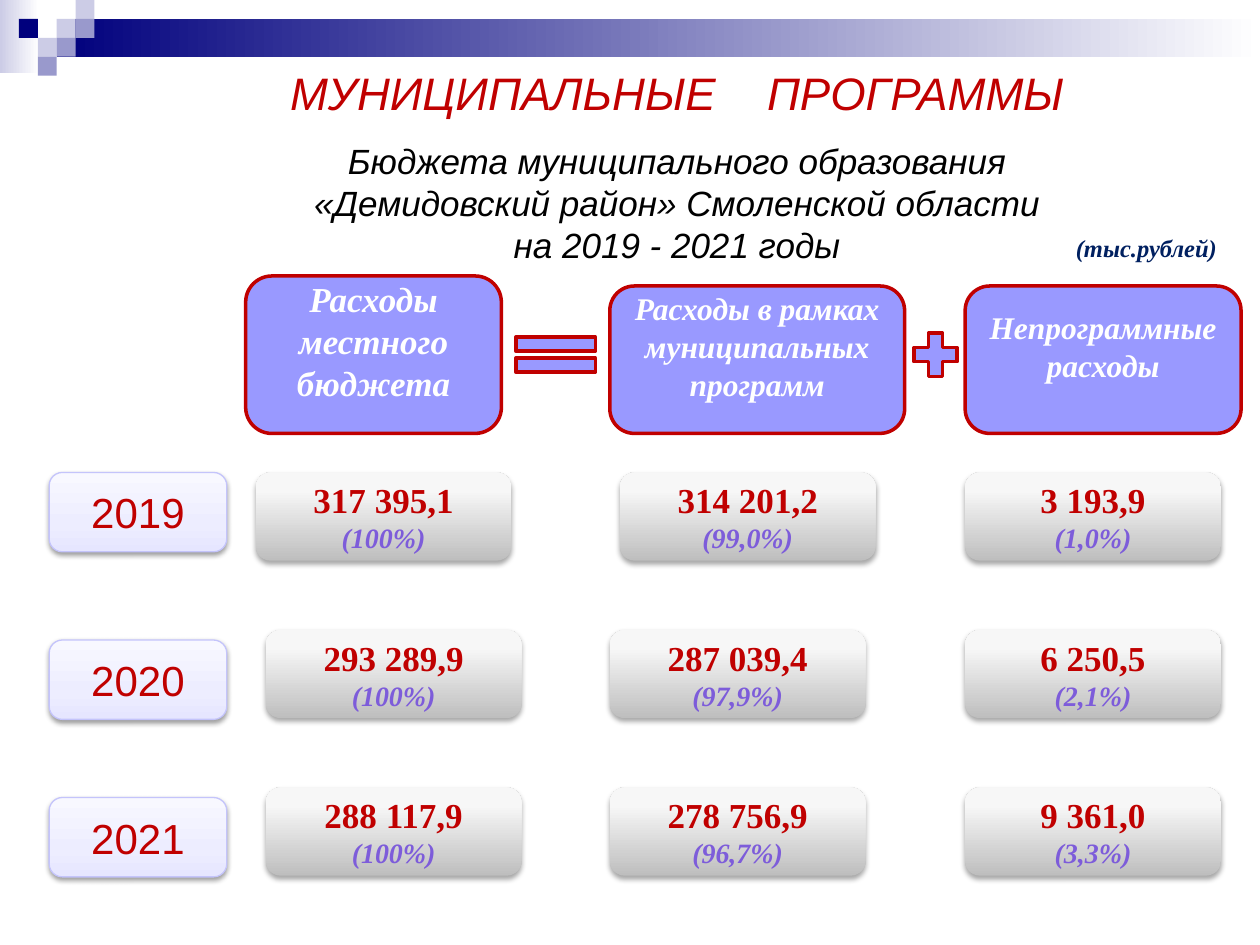
from dataclasses import dataclass

from lxml.etree import SubElement
from pptx import Presentation
from pptx.dml.color import RGBColor
from pptx.enum.shapes import MSO_SHAPE as Preset
from pptx.enum.text import MSO_ANCHOR as Anchor, PP_ALIGN as Align
from pptx.oxml.ns import qn
from pptx.util import Inches, Pt

COLORS = {
    "navy": "00007D", "pale": "CCCCE6", "lilac": "9999CC", "white": "FFFFFF",
    "red": "C00000", "violet": "9999FF", "percent": "7D5CDA", "black": "000000",
    "unit": "002060", "year_line": "C4C4FB",
}
VALUE_STOPS = [(0, "BEBEBE"), (80, "F7F7F7"), (100, "F8F8F8")]
YEAR_STOPS = [(0, "E6E6FF"), (35, "EDEDFF"), (100, "F8F8FF")]
SERIF, SANS = "Times New Roman", "Arial"


@dataclass
class BudgetSlide:
    """Holds the slide and its shared style, with a method per kind of element."""

    slide: object

    def color(self, name):
        return RGBColor.from_string(COLORS[name])

    def text_run(self, paragraph, text, size, color, font=SERIF, bold=False, italic=False):
        run = paragraph.add_run()
        run.text = text
        run.font.size, run.font.name = Pt(size), font
        run.font.bold, run.font.italic = bold, italic
        run.font.color.rgb = self.color(color)
        return run

    def shape(self, preset, left, top, width, height, fill, line=None, weight=2):
        shape = self.slide.shapes.add_shape(
            preset, Inches(left), Inches(top), Inches(width), Inches(height))
        shape.shadow.inherit = False
        if isinstance(fill, str):
            shape.fill.solid()
            shape.fill.fore_color.rgb = self.color(fill)
        else:
            self.gradient(shape, fill)
        if line:
            shape.line.color.rgb = self.color(line)
            shape.line.width = Pt(weight)
        else:
            shape.line.fill.background()
        frame = shape.text_frame
        frame.word_wrap, frame.vertical_anchor = True, Anchor.MIDDLE
        frame.paragraphs[0].alignment = Align.CENTER
        return shape

    def gradient(self, shape, stops, angle=90):
        shape.fill.gradient()
        shape.fill.gradient_angle = angle
        stop_list = shape.element.spPr.find(qn("a:gradFill")).find(qn("a:gsLst"))
        for stop in list(stop_list):
            stop_list.remove(stop)
        for position, color in stops:
            stop = SubElement(stop_list, qn("a:gs"), pos=str(position * 1000))
            SubElement(stop, qn("a:srgbClr"), val=color)

    def shadow(self, shape, distance, opacity):
        effects = shape.element.spPr.find(qn("a:effectLst"))
        outer = SubElement(
            effects, qn("a:outerShdw"), blurRad=str(Pt(3.1)), dist=str(Pt(distance)),
            dir="5400000", rotWithShape="0")
        color = SubElement(outer, qn("a:srgbClr"), val=COLORS["black"])
        SubElement(color, qn("a:alpha"), val=str(opacity * 1000))

    def band(self, left, top, width, height, start):
        band = self.shape(Preset.RECTANGLE, left, top, width, height, start)
        self.gradient(band, [(0, COLORS[start]), (100, COLORS["white"])], 0)

    def header(self, left, top, width, height, text, size):
        shape = self.shape(
            Preset.ROUNDED_RECTANGLE, left, top, width, height, "violet", "red")
        shape.text_frame.margin_bottom = Inches(0.27)
        self.text_run(shape.text_frame.paragraphs[0], text, size, "white",
                      bold=True, italic=True)

    def year(self, top, text):
        shape = self.shape(Preset.ROUNDED_RECTANGLE, 0.39, top, 1.41, 0.63,
                           YEAR_STOPS, "year_line", 0.75)
        self.shadow(shape, 1.6, 38)
        self.text_run(shape.text_frame.paragraphs[0], text, 24, "red", SANS)

    def value(self, left, top, amount, percent, indent):
        shape = self.shape(
            Preset.ROUNDED_RECTANGLE, left, top, 2.03, 0.7, VALUE_STOPS)
        self.shadow(shape, 1.8, 35)
        paragraph = shape.text_frame.paragraphs[0]
        self.indent(paragraph, indent)
        self.text_run(paragraph, amount, 20, "red", bold=True)
        paragraph = shape.text_frame.add_paragraph()
        paragraph.alignment = Align.CENTER
        self.text_run(paragraph, percent, 16, "percent", bold=True, italic=True)

    def indent(self, paragraph, width):
        if width:
            properties = paragraph._p.get_or_add_pPr()
            properties.set("marL", "0")
            properties.set("indent", str(Inches(width)))

    def text_box(self, left, top, width, height, wrap):
        box = self.slide.shapes.add_textbox(
            Inches(left), Inches(top), Inches(width), Inches(height))
        box.text_frame.word_wrap = wrap
        return box.text_frame

    def title(self, words, lines):
        frame = self.text_box(0.86, 0, 8.53, 2.44, True)
        frame.margin_top = Inches(0.52)
        heading = frame.paragraphs[0]
        heading.space_after = Pt(11)
        first, second = words
        self.text_run(heading, first, 26, "red", SANS, italic=True)
        gap = self.text_run(heading, " ", 26, "red", SANS, italic=True)
        gap._r.get_or_add_rPr().set("spc", "2170")
        self.text_run(heading, second, 26, "red", SANS, italic=True)
        for line in lines:
            self.text_run(frame.add_paragraph(), line, 20, "black", SANS, italic=True)
        for paragraph in frame.paragraphs:
            paragraph.alignment = Align.CENTER
            self.indent(paragraph, 0.5)

    def unit(self, text):
        frame = self.text_box(8.44, 1.8, 1.33, 0.34, False)
        self.text_run(frame.paragraphs[0], text, 14, "unit", bold=True, italic=True)


def main():
    presentation = Presentation()
    presentation.slide_width, presentation.slide_height = Inches(10), Inches(7.5)
    page = BudgetSlide(presentation.slides.add_slide(presentation.slide_layouts[6]))

    page.band(0, 0, 0.31, 0.58, "pale")
    page.band(0.45, 0.15, 9.55, 0.3, "navy")
    squares = [(3, 1, "pale"), (4, 0, "pale"), (4, 1, "lilac"), (2, 2, "pale"),
               (1, 1, "navy"), (3, 2, "lilac"), (2, 3, "lilac")]
    for column, row, color in squares:
        page.shape(Preset.RECTANGLE, column * 0.15, row * 0.15, 0.15, 0.15, color)

    page.title(("МУНИЦИПАЛЬНЫЕ", "ПРОГРАММЫ"),
               ("Бюджета муниципального образования",
                "«Демидовский район» Смоленской области",
                "на 2019 - 2021 годы"))
    page.header(7.66, 2.27, 2.19, 1.17, "Непрограммные расходы", 18)
    page.header(4.84, 2.27, 2.34, 1.17, "Расходы в рамках муниципальных программ", 18)
    page.header(1.95, 2.19, 2.03, 1.25, "Расходы местного бюджета", 20)
    page.shape(Preset.MATH_EQUAL, 3.98, 2.58, 0.86, 0.47, "violet", "red")
    page.shape(Preset.MATH_PLUS, 7.19, 2.58, 0.47, 0.47, "violet", "red")

    first_lefts, later_lefts = (2.03, 4.92, 7.66), (2.11, 4.84, 7.66)
    centered, shifted = (0, 0, 0), (-0.14, 0, 0)
    rows = [
        ("2019", 3.75, first_lefts, centered,
         [("317 395,1", "(100%)"), ("314 201,2", "(99,0%)"), ("3 193,9", "(1,0%)")]),
        ("2020", 5.08, later_lefts, shifted,
         [("293 289,9", "(100%)"), ("287 039,4", "(97,9%)"), ("6 250,5", "(2,1%)")]),
        ("2021", 6.33, later_lefts, shifted,
         [("288 117,9", "(100%)"), ("278 756,9", "(96,7%)"), ("9 361,0", "(3,3%)")]),
    ]
    for index, (year, year_top, lefts, indents, values) in enumerate(rows):
        page.year(year_top, year)
        for left, indent, (amount, percent) in zip(lefts, indents, values):
            page.value(left, 3.75 + index * 1.25, amount, percent, indent)

    page.unit("(тыс.рублей)")
    presentation.save("out.pptx")


if __name__ == "__main__":
    main()
